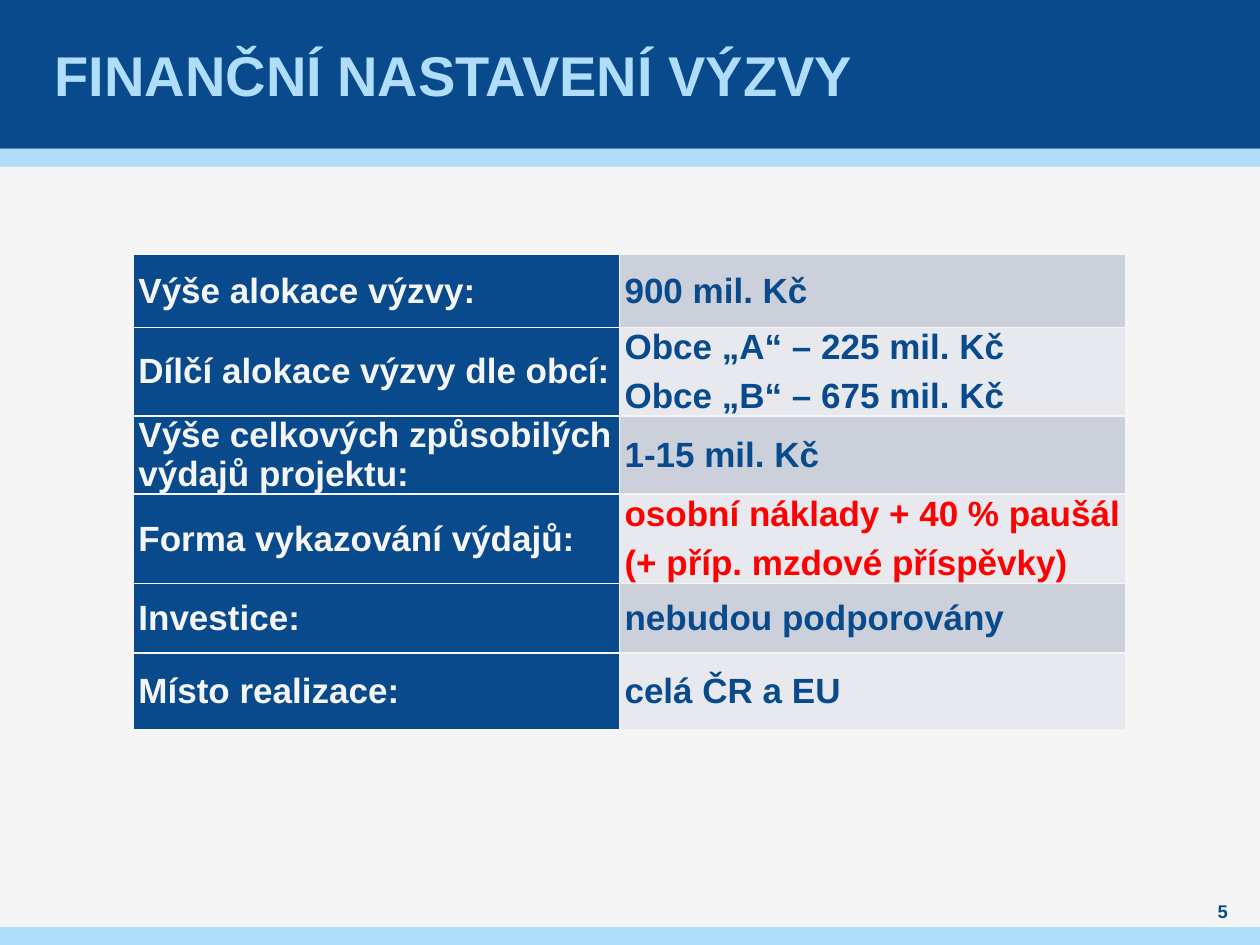
from lxml.etree import SubElement
from pptx import Presentation
from pptx.dml.color import RGBColor
from pptx.enum.shapes import MSO_SHAPE as Shape
from pptx.enum.text import MSO_ANCHOR as Anchor, MSO_AUTO_SIZE as AutoSize, PP_ALIGN as Align
from pptx.oxml.ns import qn
from pptx.util import Cm, Pt

NAVY = RGBColor(0x08, 0x4A, 0x8B)
SKY = RGBColor(0xAF, 0xDD, 0xFA)
PAPER = RGBColor(0xF5, 0xF5, 0xF5)
RED = RGBColor(0xFF, 0x00, 0x00)
BANDS = (RGBColor(0xCC, 0xD0, 0xDA), RGBColor(0xE7, 0xE9, 0xEE))

WIDTH, HEIGHT = 25.4, 19.05
HEADER, STRIPE = 3.0, 0.36

# Label, value lines, value colour, row height in cm
ROWS = [
    ("Výše alokace výzvy:", ["900 mil. Kč"], NAVY, 1.47),
    ("Dílčí alokace výzvy dle obcí:",
     ["Obce „A“ – 225 mil. Kč", "Obce „B“ – 675 mil. Kč"], NAVY, 1.47),
    ("Výše celkových způsobilých výdajů projektu:", ["1-15 mil. Kč"], NAVY, 1.4),
    ("Forma vykazování výdajů:",
     ["osobní náklady + 40 % paušál", "(+ příp. mzdové příspěvky)"], RED, 1.8),
    ("Investice:", ["nebudou podporovány"], NAVY, 1.4),
    ("Místo realizace:", ["celá ČR a EU"], NAVY, 1.55),
]
COLUMNS = (9.8, 10.21)


class SlideBuilder:
    """Holds the text style and the page being filled."""

    font_name = "Arial"

    def __init__(self, page):
        self.page = page
        page.background.fill.solid()
        page.background.fill.fore_color.rgb = PAPER

    def style(self, para, size, color, align=Align.LEFT):
        para.alignment = align
        font = para.font
        font.name, font.size, font.bold = self.font_name, Pt(size), True
        font.color.rgb = color

    def frame(self, box, side=0):
        frame = box.text_frame
        frame.word_wrap = True
        frame.auto_size = AutoSize.NONE
        frame.vertical_anchor = Anchor.MIDDLE
        frame.margin_left = frame.margin_right = Cm(side)
        frame.margin_top = frame.margin_bottom = 0
        return frame

    def band(self, top, height, color):
        bar = self.page.shapes.add_shape(
            Shape.RECTANGLE, 0, Cm(top), Cm(WIDTH), Cm(height))
        bar.shadow.inherit = False
        bar.fill.solid()
        bar.fill.fore_color.rgb = color
        bar.line.fill.background()

    def title(self, text):
        box = self.page.shapes.title
        box.left, box.top, box.width, box.height = Cm(1), 0, Cm(23.4), Cm(HEADER)
        box.element.getparent().append(box.element)  # above the header band
        frame = self.frame(box, side=0.1)
        frame.text = text
        self.style(frame.paragraphs[0], 32, SKY)

    def page_number(self, text):
        box = self.page.shapes.add_textbox(Cm(24), Cm(18.11), Cm(1.3), Cm(0.51))
        frame = self.frame(box)
        frame.text = text
        self.style(frame.paragraphs[0], 10.5, NAVY, Align.CENTER)

    def cell(self, cell, lines, color, fill):
        cell.margin_left = cell.margin_right = cell.margin_top = cell.margin_bottom = 0
        cell.vertical_anchor = Anchor.MIDDLE
        cell.text = "\n".join(lines)
        for para in cell.text_frame.paragraphs:
            self.style(para, 20, color)
            para.space_before = para.space_after = Pt(3)
            para._p.get_or_add_pPr().set("marL", str(Cm(0.1)))
        # Borders come before the fill in the cell properties
        properties = cell._tc.get_or_add_tcPr()
        for side in ("lnL", "lnR", "lnT", "lnB"):
            line = SubElement(properties, qn(f"a:{side}"), w=str(Pt(1)))
            solid = SubElement(line, qn("a:solidFill"))
            SubElement(solid, qn("a:srgbClr"), val=str(PAPER))
        cell.fill.solid()
        cell.fill.fore_color.rgb = fill

    def table(self, left, top, rows):
        table = self.page.shapes.add_table(
            len(rows), len(COLUMNS), Cm(left), Cm(top),
            Cm(sum(COLUMNS)), Cm(sum(row[-1] for row in rows))).table
        for column, width in zip(table.columns, COLUMNS):
            column.width = Cm(width)
        for index, (label, values, color, height) in enumerate(rows):
            table.rows[index].height = Cm(height)
            self.cell(table.cell(index, 0), [label], PAPER, NAVY)
            self.cell(table.cell(index, 1), values, color, BANDS[index % 2])


def main():
    deck = Presentation()
    deck.slide_width, deck.slide_height = Cm(WIDTH), Cm(HEIGHT)
    builder = SlideBuilder(deck.slides.add_slide(deck.slide_layouts[5]))

    # Header and footer bands
    builder.band(HEADER, STRIPE, SKY)
    builder.band(0, HEADER, NAVY)
    builder.band(HEIGHT - STRIPE, STRIPE, SKY)

    # Content
    builder.title("FINANČNÍ NASTAVENÍ VÝZVY")
    builder.page_number("5")
    builder.table(2.69, 5.13, ROWS)

    deck.save("out.pptx")


if __name__ == "__main__":
    main()
